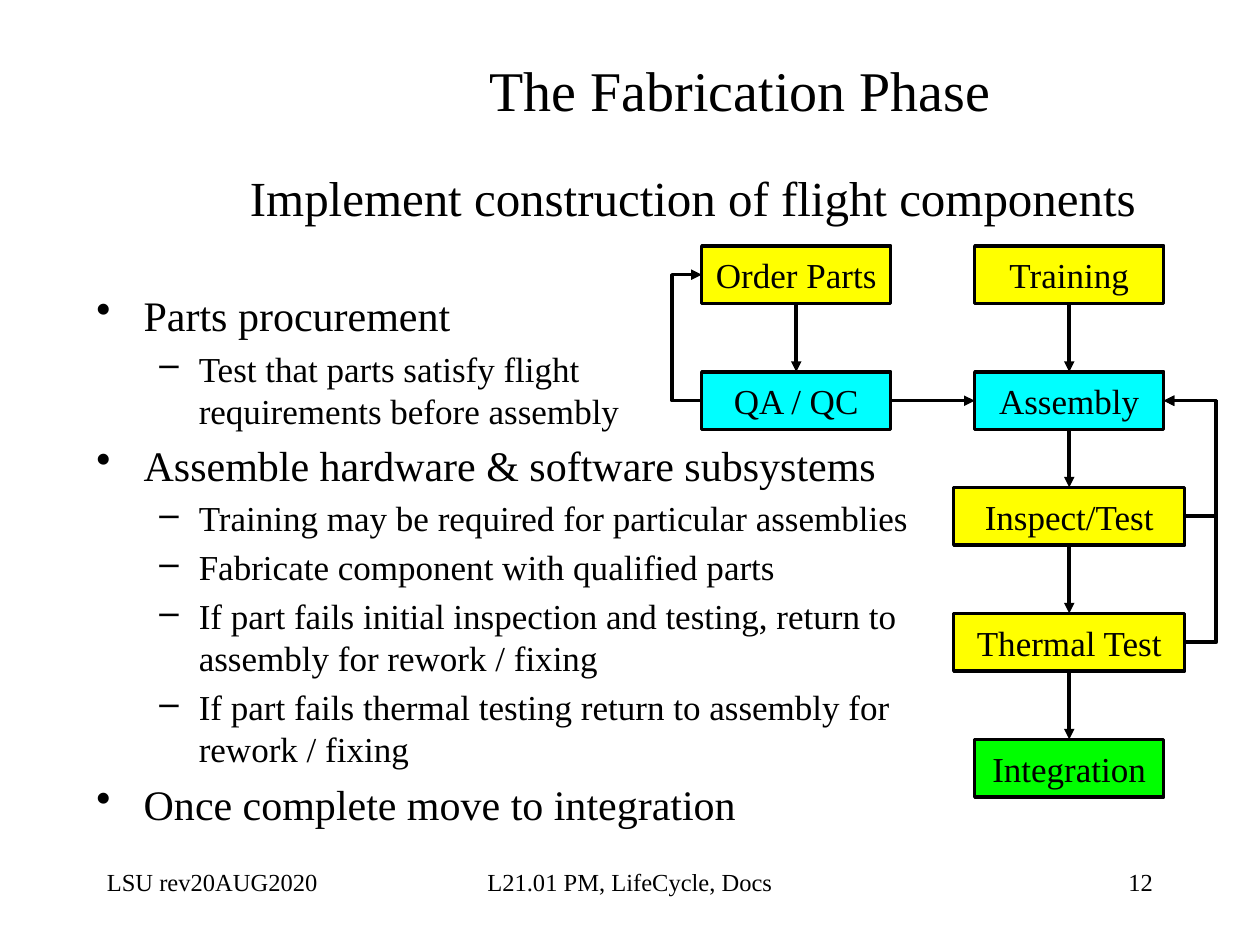
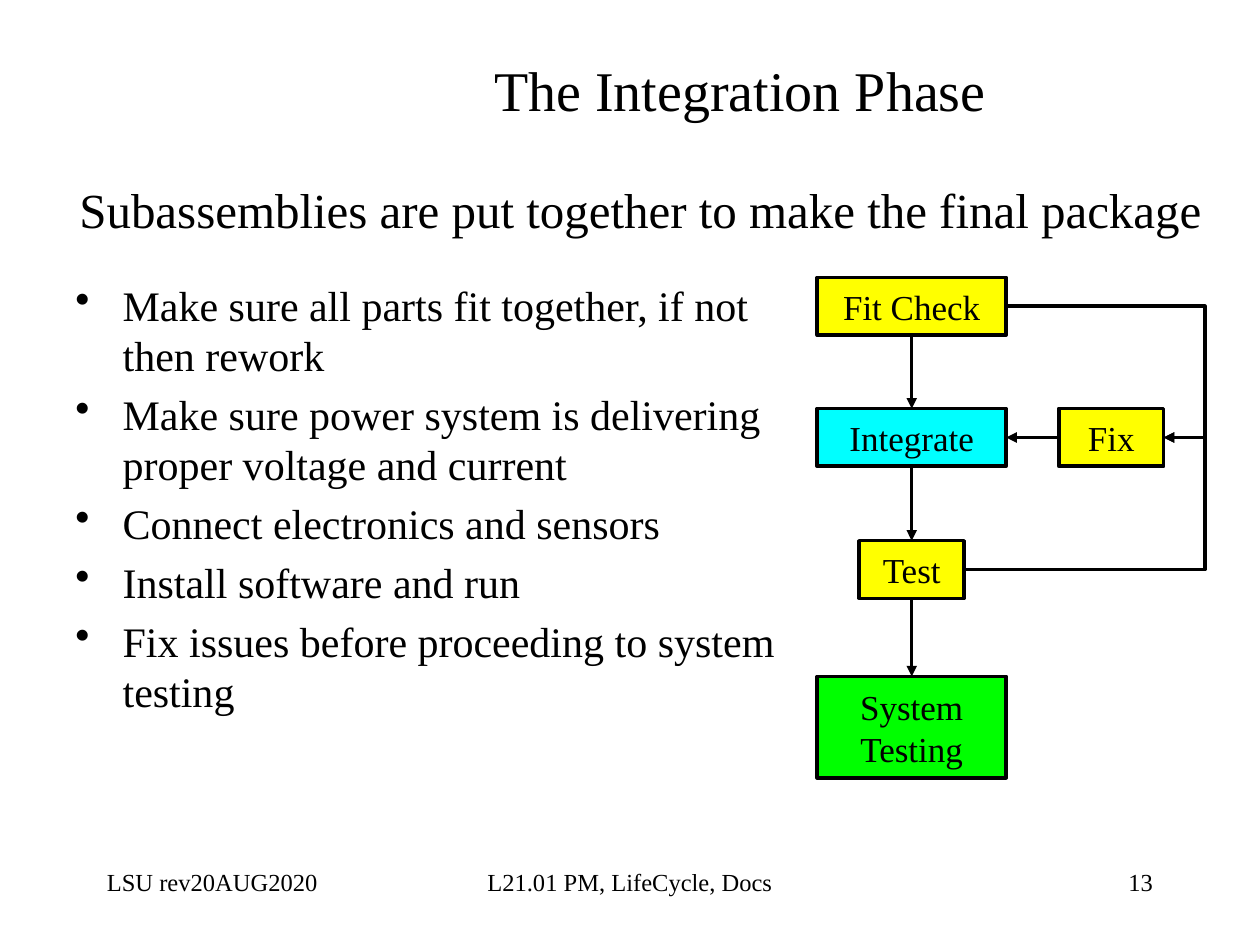
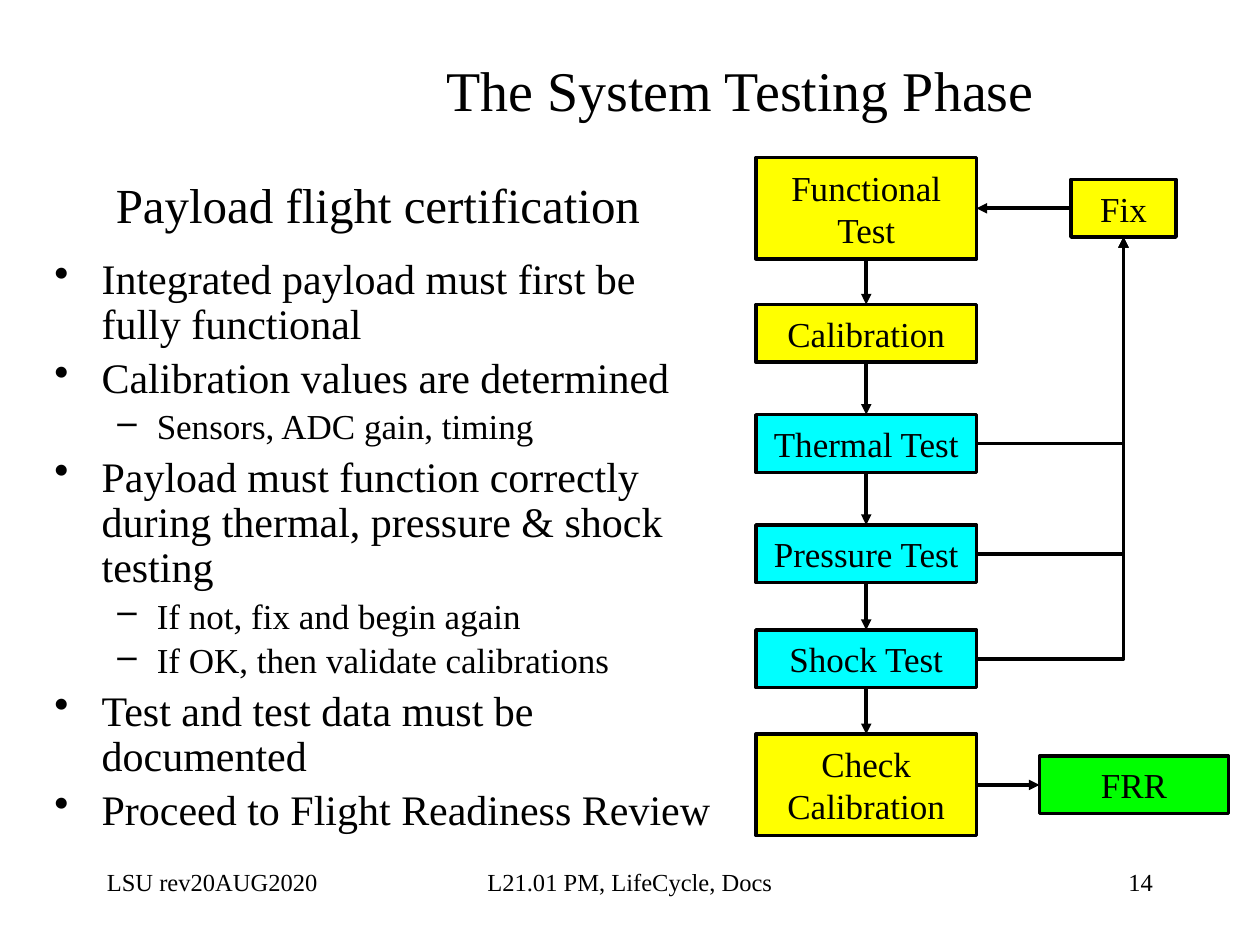
from dataclasses import dataclass

from lxml import etree
from pptx import Presentation
from pptx.dml.color import RGBColor
from pptx.enum.shapes import MSO_CONNECTOR, MSO_SHAPE
from pptx.enum.text import MSO_ANCHOR, MSO_AUTO_SIZE, PP_ALIGN
from pptx.oxml.ns import qn
from pptx.util import Pt

LEFT, CENTER, RIGHT = PP_ALIGN.LEFT, PP_ALIGN.CENTER, PP_ALIGN.RIGHT
TOP, MIDDLE = MSO_ANCHOR.TOP, MSO_ANCHOR.MIDDLE
STRAIGHT, RECTANGLE = MSO_CONNECTOR.STRAIGHT, MSO_SHAPE.RECTANGLE
SIDE_TOP, SIDE_LEFT, SIDE_BOTTOM, SIDE_RIGHT = range(4)

COLORS = {"ink": "000000", "task": "FFFF00", "core": "00FFFF", "exit": "00FF00"}
FONT_NAME = "Times New Roman"
LINE_WIDTH = 2
STEP_SIZE, STEP_HEIGHT, TALL_STEP = 20, 33, 58


@dataclass(frozen=True)
class Frame:
    left: float
    top: float
    width: float
    height: float


@dataclass(frozen=True)
class Line:
    """One paragraph; level None has no bullet."""
    text: str
    size: float
    align: PP_ALIGN = LEFT
    level: int | None = None
    spacing: float = 1.0


@dataclass(frozen=True)
class Step:
    """A flowchart box, placed by its centre."""
    label: str
    x: float
    y: float
    width: float = 108
    color: str = "task"
    height: float = STEP_HEIGHT


@dataclass(frozen=True)
class Loop:
    """A return path that runs along a vertical rail."""
    start: str
    end: str
    rail: float


@dataclass(frozen=True)
class Phase:
    number: int
    title: str
    caption: Line
    caption_frame: Frame
    points: list[Line]
    points_frame: Frame
    steps: list[Step]
    arrows: list[tuple[str, str]]
    loops: list[Loop]


@dataclass(frozen=True)
class BulletStyle:
    mark: str
    margin: float
    hanging: float
    size: float


BULLETS = [BulletStyle("•", 27, 27, 24), BulletStyle("–", 58.5, 22.5, 20)]
TITLE_FRAME = Frame(180, 30, 486, 42)
FOOTERS = [
    ("LSU rev20AUG2020", Frame(54, 492, 150, 36), LEFT),
    ("L21.01 PM, LifeCycle, Docs", Frame(246, 492, 228, 36), CENTER),
    ("{number}", Frame(516, 492, 150, 36), RIGHT),
]


def color(name: str) -> RGBColor:
    return RGBColor.from_string(COLORS[name])


def caption(text: str, spacing: float = 1.0) -> Line:
    return Line(text, 28, CENTER, spacing=spacing)


def points(*items: tuple[int, str], spacing: float = 1.0) -> list[Line]:
    return [Line(text, BULLETS[level].size, level=level, spacing=spacing)
            for level, text in items]


def chain(*labels: str) -> list[tuple[str, str]]:
    return list(zip(labels, labels[1:]))


def write(frame, lines: list[Line], anchor: MSO_ANCHOR) -> None:
    layout = {"word_wrap": True, "auto_size": MSO_AUTO_SIZE.NONE, "vertical_anchor": anchor}
    for name, value in layout.items():
        setattr(frame, name, value)
    for index, line in enumerate(lines):
        paragraph = frame.add_paragraph() if index else frame.paragraphs[0]
        paragraph.text = line.text
        if line.level is not None:
            add_bullet(paragraph, line.level)
        style = {"alignment": line.align, "line_spacing": line.spacing,
                 "space_before": Pt(0.2 * line.size if index else 0)}
        for name, value in style.items():
            setattr(paragraph, name, value)
        for run in paragraph.runs:
            for name, value in {"name": FONT_NAME, "size": Pt(line.size)}.items():
                setattr(run.font, name, value)
            run.font.color.rgb = color("ink")


def add_bullet(paragraph, level: int) -> None:
    style = BULLETS[level]
    paragraph.level = level
    properties = paragraph._p.get_or_add_pPr()
    properties.set("marL", str(Pt(style.margin)))
    properties.set("indent", str(-Pt(style.hanging)))
    etree.SubElement(properties, qn("a:buChar")).set("char", style.mark)


def add_text(slide, frame: Frame, lines: list[Line], anchor: MSO_ANCHOR = TOP) -> None:
    box = slide.shapes.add_textbox(
        Pt(frame.left), Pt(frame.top), Pt(frame.width), Pt(frame.height))
    write(box.text_frame, lines, anchor)


def outline(shape) -> None:
    shape.line.color.rgb = color("ink")
    shape.line.width = Pt(LINE_WIDTH)


def add_arrowhead(shape) -> None:
    etree.SubElement(shape.line._get_or_add_ln(), qn("a:tailEnd")).set("type", "triangle")


def add_step(slide, step: Step):
    box = slide.shapes.add_shape(
        RECTANGLE, Pt(step.x - step.width / 2), Pt(step.y - step.height / 2),
        Pt(step.width), Pt(step.height))
    box.shadow.inherit = False
    box.fill.solid()
    box.fill.fore_color.rgb = color(step.color)
    outline(box)
    write(box.text_frame, [Line(step.label, STEP_SIZE, CENTER)], MIDDLE)
    return box


def add_arrow(slide, start: Step, end: Step, boxes: dict) -> None:
    """Join two steps on the sides that face each other."""
    if start.x == end.x:
        sides = SIDE_BOTTOM, SIDE_TOP
    elif start.x < end.x:
        sides = SIDE_RIGHT, SIDE_LEFT
    else:
        sides = SIDE_LEFT, SIDE_RIGHT
    arrow = slide.shapes.add_connector(STRAIGHT, 0, 0, 0, 0)
    arrow.begin_connect(boxes[start.label], sides[0])
    arrow.end_connect(boxes[end.label], sides[1])
    outline(arrow)
    add_arrowhead(arrow)
    etree.SubElement(arrow._element.spPr, qn("a:effectLst"))


def side_toward(step: Step, rail: float) -> tuple[float, float]:
    """Point where a path from the rail meets the step."""
    if rail == step.x:
        return step.x, step.y + step.height / 2
    half = step.width / 2 if rail > step.x else -step.width / 2
    return step.x + half, step.y


def add_loop(slide, start: Step, end: Step, rail: float) -> None:
    route = [side_toward(start, rail), (rail, start.y)]
    if rail != end.x:
        route.append((rail, end.y))
    route.append(side_toward(end, rail))
    first, *rest = [(Pt(x), Pt(y)) for x, y in route]
    builder = slide.shapes.build_freeform(*first)
    builder.add_line_segments(rest, close=False)
    path = builder.convert_to_shape()
    path.shadow.inherit = False
    path.fill.background()
    outline(path)
    add_arrowhead(path)


def add_phase(deck, phase: Phase) -> None:
    slide = deck.slides.add_slide(deck.slide_layouts[6])
    for text, frame, align in FOOTERS:
        add_text(slide, frame, [Line(text.format(number=phase.number), 14, align)])
    add_text(slide, TITLE_FRAME, [Line(phase.title, 32, CENTER)], MIDDLE)
    add_text(slide, phase.caption_frame, [phase.caption])
    add_text(slide, phase.points_frame, phase.points)
    steps = {step.label: step for step in phase.steps}
    boxes = {step.label: add_step(slide, step) for step in phase.steps}
    for start, end in phase.arrows:
        add_arrow(slide, steps[start], steps[end], boxes)
    for loop in phase.loops:
        add_loop(slide, steps[loop.start], steps[loop.end], loop.rail)


PARTS_X, BUILD_X = 455, 611
FABRICATION = Phase(
    12, "The Fabrication Phase",
    caption("Implement construction of flight components", 0.9), Frame(120, 96, 552, 42),
    points(
        (0, "Parts procurement"),
        (1, "Test that parts satisfy flight\vrequirements before assembly"),
        (0, "Assemble hardware & software subsystems"),
        (1, "Training may be required for particular assemblies"),
        (1, "Fabricate component with qualified parts"),
        (1, "If part fails initial inspection and testing, return to assembly for rework / fixing"),
        (1, "If part fails thermal testing return to assembly for rework / fixing"),
        (0, "Once complete move to integration"),
    ),
    Frame(48, 162, 492, 306),
    [
        Step("Order Parts", PARTS_X, 157),
        Step("QA / QC", PARTS_X, 229, color="core"),
        Step("Training", BUILD_X, 157),
        Step("Assembly", BUILD_X, 229, color="core"),
        Step("Inspect/Test", BUILD_X, 295, 132),
        Step("Thermal Test", BUILD_X, 367, 132),
        Step("Integration", BUILD_X, 439, color="exit"),
    ],
    chain("Order Parts", "QA / QC", "Assembly")
    + chain("Training", "Assembly", "Inspect/Test", "Thermal Test", "Integration"),
    [Loop("QA / QC", "Order Parts", 384),
     Loop("Inspect/Test", "Assembly", 695),
     Loop("Thermal Test", "Assembly", 695)],
)

INTEGRATE_X = 521
INTEGRATION = Phase(
    13, "The Integration Phase",
    caption("Subassemblies are put together to make the final package"), Frame(36, 99, 660, 39),
    points(
        (0, "Make sure all parts fit together, if not then rework"),
        (0, "Make sure power system is delivering proper voltage and current"),
        (0, "Connect electronics and sensors"),
        (0, "Install software and run"),
        (0, "Fix issues before proceeding to system testing"),
    ),
    Frame(36, 156, 426, 288),
    [
        Step("Fit Check", INTEGRATE_X, 175),
        Step("Integrate", INTEGRATE_X, 250, color="core"),
        Step("Test", INTEGRATE_X, 325.5, 60),
        Step("System Testing", INTEGRATE_X, 415.5, color="exit", height=TALL_STEP),
        Step("Fix", 635, 250, 60),
    ],
    chain("Fit Check", "Integrate", "Test", "System Testing") + chain("Fix", "Integrate"),
    [Loop("Fit Check", "Fix", 688.5), Loop("Test", "Fix", 688.5)],
)

TEST_X, TEST_WIDTH, FIX_X = 495, 126, 642
FLIGHT_TESTS = ["Thermal Test", "Pressure Test", "Shock Test"]
SYSTEM_TESTING = Phase(
    14, "The System Testing Phase",
    caption("Payload flight certification"), Frame(42, 96, 348, 42),
    points(
        (0, "Integrated payload must first be fully functional"),
        (0, "Calibration values are determined"),
        (1, "Sensors, ADC gain, timing"),
        (0, "Payload must function correctly during thermal, pressure & shock testing"),
        (1, "If not, fix and begin again"),
        (1, "If OK, then validate calibrations"),
        (0, "Test and test data must be documented"),
        (0, "Proceed to Flight Readiness Review"),
        spacing=0.9,
    ),
    Frame(24, 144, 390, 354),
    [
        Step("Functional Test", TEST_X, 119, TEST_WIDTH, height=TALL_STEP),
        Step("Calibration", TEST_X, 190.5, TEST_WIDTH),
        *(Step(label, TEST_X, y, TEST_WIDTH, "core")
          for label, y in zip(FLIGHT_TESTS, (253.5, 316.5, 376.5))),
        Step("Check Calibration", TEST_X, 448.5, TEST_WIDTH, height=TALL_STEP),
        Step("FRR", 648, 448.5, color="exit"),
        Step("Fix", FIX_X, 119, 60),
    ],
    chain("Functional Test", "Calibration", *FLIGHT_TESTS, "Check Calibration", "FRR")
    + chain("Fix", "Functional Test"),
    [Loop(label, "Fix", FIX_X) for label in FLIGHT_TESTS],
)


def main() -> None:
    deck = Presentation()
    deck.slide_width, deck.slide_height = Pt(720), Pt(540)
    for phase in (FABRICATION, INTEGRATION, SYSTEM_TESTING):
        add_phase(deck, phase)
    deck.save("out.pptx")


if __name__ == "__main__":
    main()
